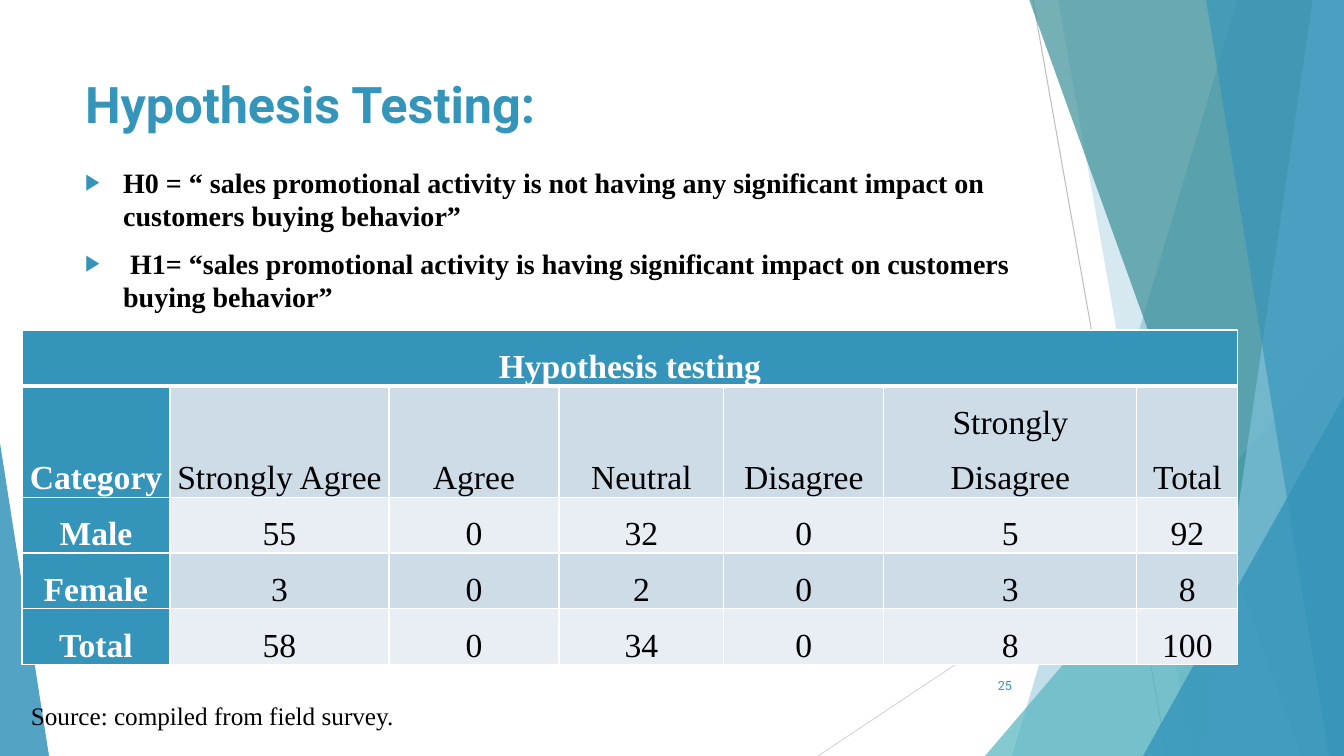
from pptx import Presentation
from pptx.dml.color import RGBColor
from pptx.enum.shapes import MSO_CONNECTOR, MSO_SHAPE
from pptx.enum.text import MSO_ANCHOR as ANCHOR, MSO_AUTO_SIZE as AUTO, PP_ALIGN as ALIGN
from pptx.oxml import parse_xml
from pptx.oxml.ns import nsdecls
from pptx.util import Emu, Pt

BLUE = RGBColor(0x34, 0x94, 0xBA)
AQUA = RGBColor(0x58, 0xB6, 0xC0)
TEAL = RGBColor(0x3A, 0x8F, 0x98)
SKY = RGBColor(0x7F, 0xC1, 0xDB)
MIST = RGBColor(0xCE, 0xDC, 0xE7)
PALE = RGBColor(0xE8, 0xEE, 0xF3)
GRAY = RGBColor(0xBF, 0xBF, 0xBF)
LIGHT_GRAY = RGBColor(0xD9, 0xD9, 0xD9)
WHITE = RGBColor(0xFF, 0xFF, 0xFF)
BLACK = RGBColor(0, 0, 0)
SERIF, SANS = "Times New Roman", "Roboto"
WIDTH, HEIGHT = 1344, 756


def px(*lengths):
    return [Emu(round(length * 914400 / 100.8)) for length in lengths]


def write(paragraph, text, font, size, color, bold=False, align=ALIGN.LEFT, spacing=1.0):
    paragraph.alignment = align
    paragraph.line_spacing = spacing
    run = paragraph.add_run()
    run.text = text
    for key, value in dict(name=font, size=Pt(size), bold=bold).items():
        setattr(run.font, key, value)
    run.font.color.rgb = color


deck = Presentation()
deck.slide_width, deck.slide_height = px(WIDTH, HEIGHT)
slide = deck.slides.add_slide(deck.slide_layouts[1])
shapes = slide.shapes

for ends, color in [((1033, 0, 1167, HEIGHT), GRAY), ((WIDTH, 406, 818, HEIGHT), LIGHT_GRAY)]:
    ray = shapes.add_connector(MSO_CONNECTOR.STRAIGHT, *px(*ends))
    ray.line.color.rgb = color
    ray.line.width = Pt(0.75)
    ray.element.spPr.append(parse_xml(f"<a:effectLst {nsdecls('a')}/>"))

facets = [
    ("band", (1238, 1012), BLUE, 30),
    ("band", (1058, 1192), BLUE, 20),
    ("triangle", (985, 336, 359, 420, 1), AQUA, 72),
    ("band", (1029, 1301), TEAL, 70),
    ("band", (1313, 1202), SKY, 70),
    ("band", (1206, 1329), BLUE, 65),
    ("triangle", (1143, 396, 201, 360, 1), BLUE, 80),
    ("triangle", (0, 443, 49, 313, 0), BLUE, 85),
]
for kind, geometry, color, opacity in facets:
    if kind == "band":
        top_x, bottom_x = geometry
        outline = shapes.build_freeform(*px(top_x, -1), scale=1.0)
        corners = [(WIDTH, -1), (WIDTH, HEIGHT), (bottom_x, HEIGHT)]
        outline.add_line_segments([px(*corner) for corner in corners], close=True)
        facet = outline.convert_to_shape()
    else:
        *box, apex = geometry
        facet = shapes.add_shape(MSO_SHAPE.ISOSCELES_TRIANGLE, *px(*box))
        facet.adjustments[0] = apex
    facet.shadow.inherit = False
    facet.line.fill.background()
    facet.fill.solid()
    facet.fill.fore_color.rgb = color
    facet.element.spPr.find(".//{*}srgbClr").append(
        parse_xml(f'<a:alpha {nsdecls("a")} val="{opacity * 1000}"/>'))

heading, hypotheses = shapes.title, slide.placeholders[1]
for holder, box in [(heading, (75, 68, 948, 145)), (hypotheses, (75, 160, 948, 427))]:
    holder.left, holder.top, holder.width, holder.height = px(*box)
    holder.text_frame.auto_size = AUTO.NONE
    holder.text_frame.vertical_anchor = ANCHOR.TOP
    shapes.element.append(holder.element)
write(heading.text_frame.paragraphs[0], "Hypothesis Testing:", SANS, 36, BLUE, True)

statements = [
    "H0 = “ sales promotional activity is not having any significant impact on customers buying behavior”",
    " H1= “sales promotional activity is having significant impact on customers buying behavior”",
]
hypotheses.text_frame.text = "\n" * (len(statements) - 1)
indent = px(38)[0]
for paragraph, statement in zip(hypotheses.text_frame.paragraphs, statements):
    write(paragraph, statement, SERIF, 20, BLACK, True)
    paragraph.space_before = Pt(10)
    props = paragraph._p.get_or_add_pPr()
    props.set("marL", str(indent))
    props.set("indent", str(-indent))
    for bullet in (f'<a:buClr {nsdecls("a")}><a:srgbClr val="{BLUE}"/></a:buClr>',
                   f'<a:buSzPct {nsdecls("a")} val="80000"/>',
                   f'<a:buChar {nsdecls("a")} char="▶"/>'):
        props.append(parse_xml(bullet))

rows = [
    ["Hypothesis testing"] + [""] * 6,
    ["Category", "Strongly Agree", "Agree", "Neutral", "Disagree", "Strongly Disagree", "Total"],
    ["Male", "55", "0", "32", "0", "5", "92"],
    ["Female", "3", "0", "2", "0", "3", "8"],
    ["Total", "58", "0", "34", "0", "8", "100"],
]
column_widths = [148, 219, 170, 165, 160, 253, 101]
row_height = 46
survey = shapes.add_table(len(rows), len(column_widths), *px(
    22, 330, sum(column_widths), row_height * len(rows))).table
survey.horz_banding = False
for column, width in zip(survey.columns, px(*column_widths)):
    column.width = width
for row in survey.rows:
    row.height = px(row_height)[0]
survey.cell(0, 0).merge(survey.cell(0, len(column_widths) - 1))
side_margin = px(7)[0]
for r, row in enumerate(rows):
    for c, text in enumerate(row):
        cell = survey.cell(r, c)
        is_header = r == 0 or c == 0
        layout = dict(margin_left=side_margin, margin_right=side_margin, margin_top=0,
                      margin_bottom=0, vertical_anchor=ANCHOR.BOTTOM)
        for key, value in layout.items():
            setattr(cell, key, value)
        for side in "LRTB":
            points = 3 if (r, side) in [(0, "B"), (1, "T")] else 1
            cell._tc.get_or_add_tcPr().append(parse_xml(
                f'<a:ln{side} {nsdecls("a")} w="{Pt(points)}"><a:solidFill>'
                f'<a:srgbClr val="{WHITE}"/></a:solidFill></a:ln{side}>'))
        cell.fill.solid()
        cell.fill.fore_color.rgb = BLUE if is_header else (MIST if r % 2 else PALE)
        if text:
            write(cell.text_frame.paragraphs[0], text, SERIF, 24,
                  WHITE if is_header else BLACK, is_header, ALIGN.CENTER, 1.5)

source_note = shapes.add_textbox(*px(21, 680, 387, 56)).text_frame
source_note.word_wrap = False
source_note.auto_size = AUTO.SHAPE_TO_FIT_TEXT
write(source_note.paragraphs[0], "Source: compiled from field survey.", SERIF, 18, BLACK,
      align=ALIGN.JUSTIFY, spacing=1.5)

page_number = shapes.add_textbox(*px(947, 666, 75, 40)).text_frame
page_number.word_wrap = True
page_number.vertical_anchor = ANCHOR.MIDDLE
write(page_number.paragraphs[0], "25", SANS, 9, BLUE, align=ALIGN.RIGHT)

deck.save("out.pptx")
